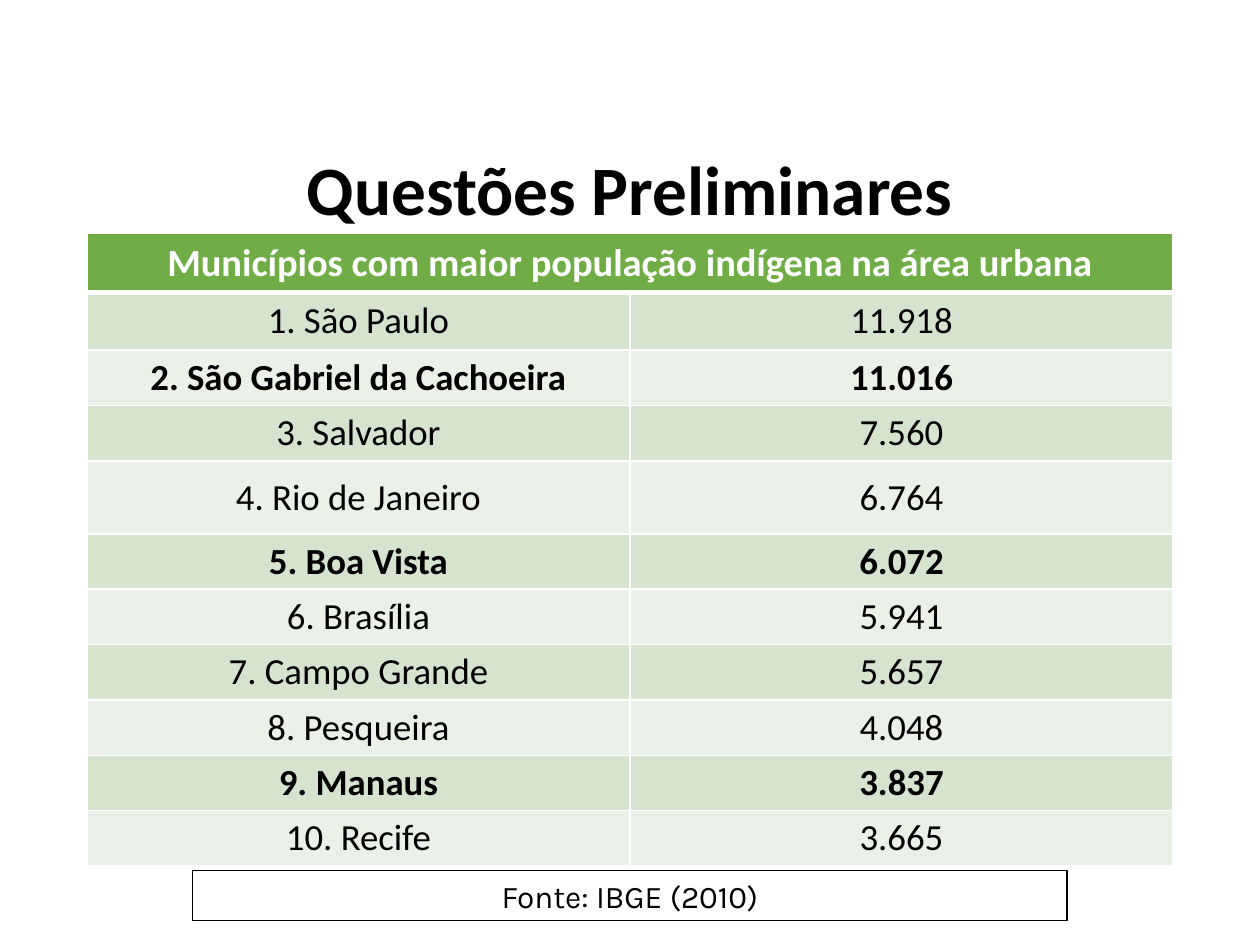
from dataclasses import dataclass

from lxml import etree
from pptx import Presentation
from pptx import util as u
from pptx.dml.color import RGBColor
from pptx.enum import shapes, text
from pptx.oxml import ns


@dataclass(frozen=True)
class Theme:
    ink: str = "000000"
    paper: str = "FFFFFF"
    header: str = "70AD47"
    bands: tuple = ("D5E3CF", "EBF1E9")
    body_font: str = "Calibri"
    source_font: str = "Karla"
    title_size: float = 39.6
    header_size: float = 22
    row_size: float = 21
    source_size: float = 18
    rule: float = 1
    header_rule: float = 3
    frame_rule: float = 0.75


@dataclass(frozen=True)
class Box:
    left: float
    top: float
    width: float
    height: float

    def place(self):
        return [u.Inches(share * side) for share, side in
                zip((self.left, self.top, self.width, self.height), PAGE_SIZE * 2)]


THEME = Theme()
PAGE_SIZE = (10, 7.5)
TITLE_BOX = Box(0.069, 0.156, 0.862, 0.096)
TABLE_BOX = Box(0.069, 0.2467, 0.862, 0.67)
SOURCE_BOX = Box(0.153, 0.921, 0.694, 0.0533)
TABLE_HEADING = "Municípios com maior população indígena na área urbana"
MUNICIPALITIES = [
    ("São Paulo", "11.918"),
    ("São Gabriel da Cachoeira", "11.016"),
    ("Salvador", "7.560"),
    ("Rio de Janeiro", "6.764"),
    ("Boa Vista", "6.072"),
    ("Brasília", "5.941"),
    ("Campo Grande", "5.657"),
    ("Pesqueira", "4.048"),
    ("Manaus", "3.837"),
    ("Recife", "3.665"),
]
HIGHLIGHTED = {2, 5, 9}
ROW_SHARES = [0.47, 0.46, 0.44, 0.44, 0.58] + [0.44] * 6


def color(code):
    return RGBColor.from_string(code)


def write(frame, words, size, font, ink, bold=False):
    para = frame.paragraphs[0]
    para.alignment = text.PP_ALIGN.CENTER
    span = para.add_run()
    span.text = words
    span.font.size = u.Pt(size)
    span.font.name = font
    span.font.bold = bold
    span.font.color.rgb = color(ink)
    return para


def add_title(page, box):
    frame = page.shapes.add_textbox(*box.place()).text_frame
    frame.word_wrap = True
    frame.vertical_anchor = text.MSO_ANCHOR.MIDDLE
    para = write(frame, "Questões Preliminares", THEME.title_size,
                 THEME.body_font, THEME.ink, bold=True)
    para.line_spacing = 0.9


def style_cell(cell, fill, top=THEME.rule, bottom=THEME.rule):
    properties = cell._tc.get_or_add_tcPr()
    for side, width in (("L", THEME.rule), ("R", THEME.rule), ("T", top), ("B", bottom)):
        line = etree.SubElement(properties, ns.qn(f"a:ln{side}"), w=str(u.Pt(width)))
        paint = etree.SubElement(line, ns.qn("a:solidFill"))
        etree.SubElement(paint, ns.qn("a:srgbClr"), val=THEME.paper)
    cell.fill.solid()
    cell.fill.fore_color.rgb = color(fill)


def add_population_table(page, box):
    left, top, width, height = box.place()
    table = page.shapes.add_table(len(ROW_SHARES), 2, left, top, width, height).table
    for column in table.columns:
        column.width = width // 2
    for row, share in zip(table.rows, ROW_SHARES):
        row.height = int(height * share / sum(ROW_SHARES))

    heading = table.cell(0, 0)
    heading.merge(table.cell(0, 1))
    for cell in table.rows[0].cells:
        style_cell(cell, THEME.header, bottom=THEME.header_rule)
    write(heading.text_frame, TABLE_HEADING, THEME.header_size,
          THEME.body_font, THEME.paper, bold=True)

    for rank, (name, population) in enumerate(MUNICIPALITIES, start=1):
        for column, words in enumerate((f"{rank}. {name}", population)):
            cell = table.cell(rank, column)
            if rank > 1:
                cell.vertical_anchor = text.MSO_ANCHOR.MIDDLE
                cell.margin_left = cell.margin_right = u.Inches(0.04)
                cell.margin_top = cell.margin_bottom = u.Inches(0.04)
            style_cell(cell, THEME.bands[(rank - 1) % 2],
                       top=THEME.header_rule if rank == 1 else THEME.rule)
            write(cell.text_frame, words, THEME.row_size, THEME.body_font,
                  THEME.ink, bold=rank in HIGHLIGHTED)


def add_source(page, box):
    shape = page.shapes.add_shape(shapes.MSO_SHAPE.RECTANGLE, *box.place())
    shape.shadow.inherit = False
    shape.fill.background()
    shape.line.color.rgb = color(THEME.ink)
    shape.line.width = u.Pt(THEME.frame_rule)
    frame = shape.text_frame
    frame.word_wrap = True
    frame.vertical_anchor = text.MSO_ANCHOR.TOP
    frame.auto_size = text.MSO_AUTO_SIZE.SHAPE_TO_FIT_TEXT
    write(frame, "Fonte: IBGE (2010)", THEME.source_size,
          THEME.source_font, THEME.ink)


def main():
    deck = Presentation()
    deck.slide_width, deck.slide_height = map(u.Inches, PAGE_SIZE)
    page = deck.slides.add_slide(deck.slide_layouts[6])
    page.background.fill.solid()
    page.background.fill.fore_color.rgb = color(THEME.paper)
    add_title(page, TITLE_BOX)
    add_population_table(page, TABLE_BOX)
    add_source(page, SOURCE_BOX)
    deck.save("out.pptx")


if __name__ == "__main__":
    main()
